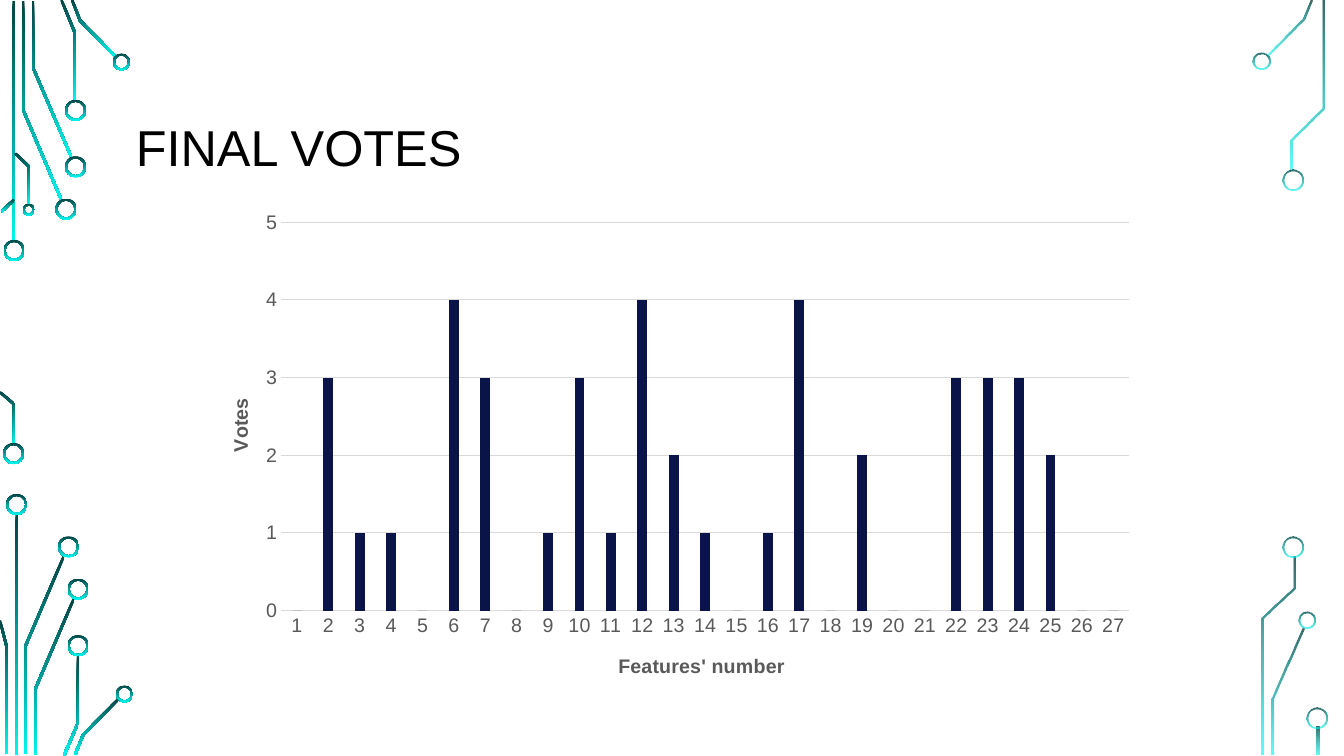
import math
from dataclasses import dataclass

import lxml.etree
import pptx
import pptx.chart.data
import pptx.dml.color
import pptx.enum.chart
import pptx.enum.shapes
import pptx.enum.text
import pptx.oxml
import pptx.oxml.ns
import pptx.util

RGBColor = pptx.dml.color.RGBColor
BLACK = RGBColor(0x00, 0x00, 0x00)
DARK_TEAL = RGBColor(0x00, 0x45, 0x43)
BRIGHT_TEAL = RGBColor(0x00, 0xF5, 0xEE)
GREY_TEXT = RGBColor(0x59, 0x59, 0x59)
GREY_LINE = RGBColor(0xD9, 0xD9, 0xD9)
NAVY = RGBColor(0x0A, 0x14, 0x49)

FONT = "Arial"
TRACE_WIDTH = 0.25
RING_WIDTH = 0.2
OPAQUE = (100, 100)
FADED = (80, 60)
VOTES = [0, 3, 1, 1, 0, 4, 3, 0, 1, 3, 1, 4, 2, 1, 0, 1, 4, 0, 2, 0, 0, 3, 3, 3, 2, 0, 0]


@dataclass(frozen=True)
class Trace:
    """A circuit line through (column, row) points."""
    points: tuple[tuple[float, float], ...]
    opacity: tuple[int, int] = OPAQUE


@dataclass(frozen=True)
class Ring:
    """A circuit end, by its centre column and row."""
    column: float
    row: float
    size: float = 2.1
    opacity: tuple[int, int] = OPAQUE


TRACES = [
    # Top left
    Trace(((1.35, 0.1), (1.35, 24))),
    Trace(((2.3, 0.1), (2.3, 10.9), (6.1, 19.85))),
    Trace(((3.25, 0.1), (3.25, 6.65), (7.1, 15.65))),
    Trace(((6.1, 0), (7.45, 3.3), (7.45, 10))),
    Trace(((7.15, 0), (7.95, 2.05), (11.55, 5.7))),
    Trace(((1.4, 19.8), (0.15, 21))),
    Trace(((1.5, 15.2), (2.9, 16.55), (2.9, 20.3))),
    Trace(((0, 38.9), (1.4, 40.1), (1.4, 44.1))),
    # Bottom left
    Trace(((1.65, 51), (1.65, 74.9))),
    Trace(((6.35, 55.15), (2.55, 64.05), (2.55, 74.8))),
    Trace(((0, 61.55), (0.65, 64.1), (0.65, 74.8))),
    Trace(((7.35, 59.35), (3.55, 68.25), (3.55, 74.9))),
    Trace(((7.75, 65), (7.75, 71.7), (6.35, 74.95))),
    Trace(((11.8, 69.3), (8.25, 72.9), (7.45, 74.85))),
    # Right
    Trace(((130.05, 0.05), (129.25, 1.95), (125.7, 5.55)), FADED),
    Trace(((128.2, 16.9), (128.2, 13.85), (131.25, 10.75), (131.25, 0.1)), FADED),
    Trace(((129.3, 62.35), (126.25, 69.35), (126.25, 74.9)), FADED),
    Trace(((128.35, 55.2), (128.35, 58.35), (125.25, 61.35), (125.25, 74.9)), FADED),
    Trace(((130.75, 72.1), (130.75, 74.9)), FADED),
]
RINGS = [
    Ring(1.4, 24.85), Ring(1.35, 45), Ring(6.55, 20.75), Ring(7.5, 16.55),
    Ring(7.5, 10.95), Ring(12.05, 6.15, 1.7), Ring(2.85, 20.8, 1.2),
    Ring(1.65, 50.05), Ring(6.8, 54.25), Ring(7.75, 58.45),
    Ring(7.75, 64.05), Ring(12.35, 68.85, 1.7),
    Ring(125.15, 6.05, 1.7, FADED), Ring(128.25, 17.85, 2.1, FADED),
    Ring(129.65, 61.55, 1.7, FADED), Ring(128.3, 54.25, 2.1, FADED),
    Ring(130.65, 71.2, 2.1, FADED),
]


def grid(cells: float) -> int:
    """Ten columns or rows to the inch."""
    return pptx.util.Inches(cells / 10)


def paint(shape, opacity: tuple[int, int]) -> None:
    shape.shadow.inherit = False
    shape.line.fill.background()
    shape.fill.gradient()
    shape.fill.gradient_angle = 270
    for stop, color in zip(shape.fill.gradient_stops, (DARK_TEAL, BRIGHT_TEAL)):
        stop.color.rgb = color
    if opacity != OPAQUE:
        colors = shape.element.spPr.iter(pptx.oxml.ns.qn("a:srgbClr"))
        for color, share in zip(list(colors), opacity):
            alpha = lxml.etree.SubElement(color, pptx.oxml.ns.qn("a:alpha"))
            alpha.set("val", str(share * 1000))


def ribbon(points: tuple[tuple[float, float], ...]) -> list[tuple[int, int]]:
    """Outline of a line of even width with mitred bends."""
    angles = [math.atan2(y2 - y1, x2 - x1)
              for (x1, y1), (x2, y2) in zip(points, points[1:])]
    left, right = [], []
    for (x, y), before, after in zip(points, angles[:1] + angles, angles + angles[-1:]):
        reach = TRACE_WIDTH / 2 / math.cos((after - before) / 2)
        normal = (before + after) / 2 + math.pi / 2
        dx, dy = reach * math.cos(normal), reach * math.sin(normal)
        left.append((grid(x + dx), grid(y + dy)))
        right.append((grid(x - dx), grid(y - dy)))
    return left + right[::-1]


def draw_trace(slide, trace: Trace) -> None:
    outline = ribbon(trace.points)
    builder = slide.shapes.build_freeform(*outline[0], scale=1.0)
    builder.add_line_segments(outline[1:], close=True)
    paint(builder.convert_to_shape(), trace.opacity)


def draw_ring(slide, ring: Ring) -> None:
    shape = slide.shapes.add_shape(
        pptx.enum.shapes.MSO_SHAPE.DONUT, grid(ring.column - ring.size / 2),
        grid(ring.row - ring.size / 2), grid(ring.size), grid(ring.size))
    shape.adjustments[0] = RING_WIDTH / ring.size
    paint(shape, ring.opacity)


def draw_title(slide, text: str) -> None:
    box = slide.shapes.add_textbox(grid(12.5), grid(6.8), grid(108.3), grid(16.2))
    frame = box.text_frame
    frame.word_wrap = True
    frame.vertical_anchor = pptx.enum.text.MSO_ANCHOR.MIDDLE
    paragraph = frame.paragraphs[0]
    paragraph.line_spacing = 0.9
    run = paragraph.add_run()
    run.text = text
    style_font(run.font, 36, BLACK)


def style_font(font, size: float, color: RGBColor, bold: bool = False) -> None:
    font.name, font.size, font.bold = FONT, pptx.util.Pt(size), bold
    font.color.rgb = color


def place(element, index: int, **shares: float) -> None:
    """Fix a chart part at shares of the chart's size."""
    for layout in element.findall(pptx.oxml.ns.qn("c:layout")):
        element.remove(layout)
    inner = '<c:layoutTarget val="inner"/>' if "w" in shares else ""
    modes = "".join(f'<c:{key}Mode val="edge"/>' for key in shares if key in "xy")
    values = "".join(f'<c:{key} val="{share}"/>' for key, share in shares.items())
    element.insert(index, pptx.oxml.parse_xml(
        f'<c:layout {pptx.oxml.ns.nsdecls("c")}><c:manualLayout>'
        f"{inner}{modes}{values}</c:manualLayout></c:layout>"))


def style_axis(axis, title: str, x: float, y: float) -> None:
    axis.major_tick_mark = axis.minor_tick_mark = pptx.enum.chart.XL_TICK_MARK.NONE
    style_font(axis.tick_labels.font, 14, GREY_TEXT)
    run = axis.axis_title.text_frame.paragraphs[0].add_run()
    run.text = title
    style_font(run.font, 14, GREY_TEXT, bold=True)
    place(axis.axis_title.format.line and axis.axis_title._element, 1, x=x, y=y)


def draw_chart(slide) -> None:
    data = pptx.chart.data.CategoryChartData()
    data.categories = [str(number) for number in range(1, len(VOTES) + 1)]
    data.add_series("Series 1", VOTES)
    chart = slide.shapes.add_chart(
        pptx.enum.chart.XL_CHART_TYPE.COLUMN_CLUSTERED,
        grid(19.4), grid(20.1), grid(94.5), grid(48.8), data).chart
    chart.has_title = chart.has_legend = False
    style_font(chart.font, 10, BLACK)
    # Columns
    plot = chart.plots[0]
    plot.gap_width, plot.overlap, plot.vary_by_categories = 219, -27, False
    fill = plot.series[0].format.fill
    fill.solid()
    fill.fore_color.rgb = NAVY
    # Axes
    features, votes = chart.category_axis, chart.value_axis
    style_axis(features, "Features' number", 0.44, 0.91)
    style_axis(votes, "Votes", 0.03, 0.39)
    votes.minimum_scale, votes.maximum_scale, votes.major_unit = 0, 5, 1
    votes.format.line.fill.background()
    for line in (features.format.line, votes.major_gridlines.format.line):
        line.color.rgb = GREY_LINE
        line.width = pptx.util.Pt(0.75)
    plot_area = chart.element.find(".//" + pptx.oxml.ns.qn("c:plotArea"))
    place(plot_area, 0, x=0.09, y=0.04, w=0.89, h=0.79)


def main() -> None:
    presentation = pptx.Presentation()
    presentation.slide_width, presentation.slide_height = grid(133.33), grid(75)
    slide = presentation.slides.add_slide(presentation.slide_layouts[6])
    for trace in TRACES:
        draw_trace(slide, trace)
    for ring in RINGS:
        draw_ring(slide, ring)
    draw_title(slide, "FINAL VOTES")
    draw_chart(slide)
    presentation.save("out.pptx")


if __name__ == "__main__":
    main()
